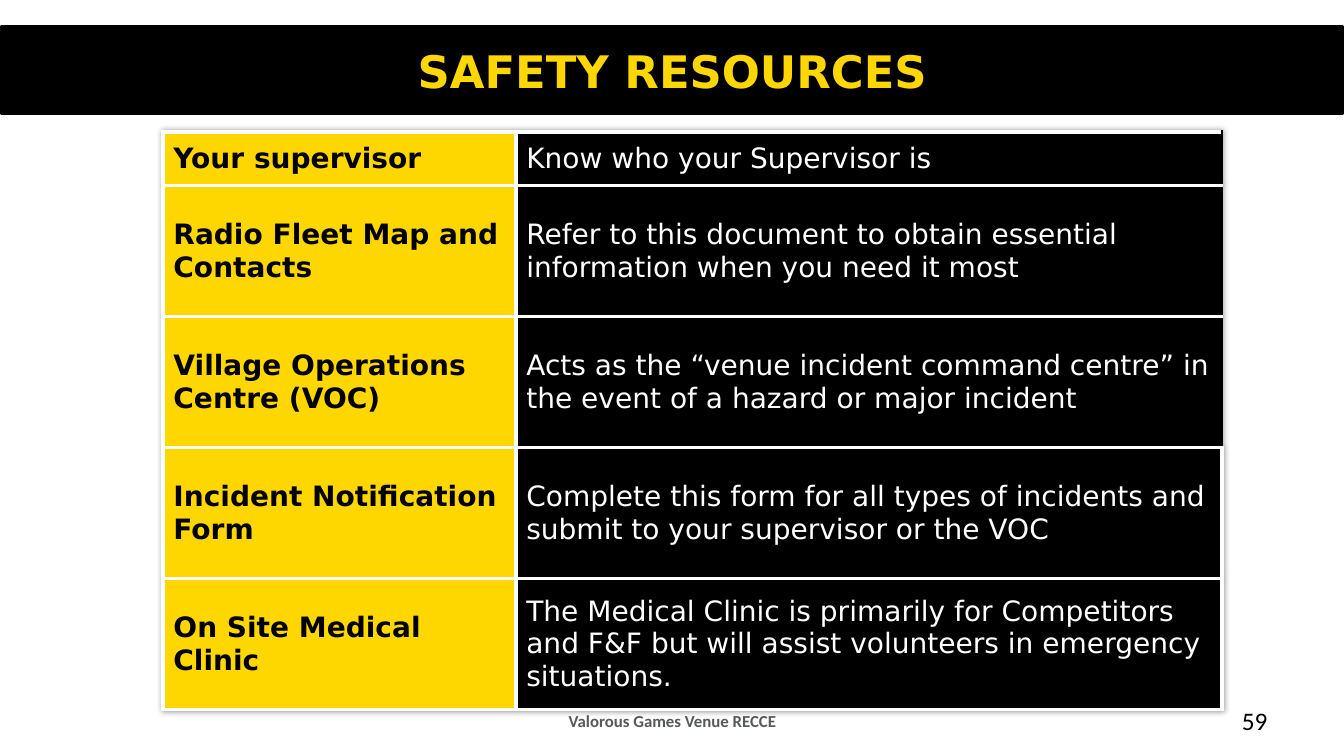
from lxml import etree
from pptx import Presentation
from pptx.dml.color import RGBColor as RGB
from pptx.enum.shapes import MSO_SHAPE as SHAPE
from pptx.enum.text import MSO_ANCHOR as ANCHOR, PP_ALIGN as ALIGN
from pptx.oxml import parse_xml
from pptx.oxml.ns import nsdecls, qn
from pptx.util import Inches, Pt

COLORS = {"black": "000000", "white": "FFFFFF", "gold": "FFD700", "gray": "58595B"}


def write(tf, text, color, align, **font):
    tf.word_wrap = True
    p = tf.paragraphs[0]
    p.alignment = align
    r = p.add_run()
    r.text = text
    for name, value in font.items():
        setattr(r.font, name, value)
    r.font.color.rgb = RGB.from_string(COLORS[color])


def set_border(cell, side, color, width):
    ln = etree.Element(qn(f"a:{side}"), w=str(Pt(width)))
    fill = etree.SubElement(ln, qn("a:solidFill"))
    etree.SubElement(fill, qn("a:srgbClr"), val=COLORS[color])
    cell._tc.get_or_add_tcPr().append(ln)


prs = Presentation()
prs.slide_width, prs.slide_height = Inches(13.33), Inches(7.5)
s = prs.slides.add_slide(prs.slide_layouts[6])

# Title band
band = s.shapes.add_shape(SHAPE.RECTANGLE, Inches(0.01), Inches(0.26), Inches(13.31), Inches(0.87))
band.shadow.inherit = False
band.fill.solid()
band.fill.fore_color.rgb = band.line.color.rgb = RGB.from_string(COLORS["black"])
band.line.width = Pt(2)

# Title, footer and slide number
TEXTS = [
    ("SAFETY RESOURCES", (0.67, 0.27, 12, 0.86), "gold", ALIGN.CENTER,
     {"size": Pt(32), "name": "DejaVu Sans", "bold": True}),
    ("Valorous Games Venue RECCE", (4.56, 6.95, 4.22, 0.4), "gray", ALIGN.CENTER,
     {"size": Pt(12), "name": "Calibri", "bold": True}),
    ("59", (9.56, 6.95, 3.11, 0.4), "black", ALIGN.RIGHT,
     {"size": Pt(18), "name": "Calibri"}),
]
for text, box, color, align, font in TEXTS:
    tf = s.shapes.add_textbox(*map(Inches, box)).text_frame
    tf.vertical_anchor = ANCHOR.MIDDLE
    write(tf, text, color, align, **font)

# Resource table
RESOURCES = [
    ("Your supervisor", "Know who your Supervisor is"),
    ("Radio Fleet Map and Contacts",
     "Refer to this document to obtain essential information when you need it most"),
    ("Village Operations Centre (VOC)",
     "Acts as the “venue incident command centre” in the event of a hazard or major incident"),
    ("Incident Notification Form",
     "Complete this form for all types of incidents and submit to your supervisor or the VOC"),
    ("On Site Medical Clinic",
     "The Medical Clinic is primarily for Competitors and F&F but will assist volunteers "
     "in emergency situations."),
]
COLUMNS = [(3.5, "gold", "black", True), (7, "black", "white", False)]
BLACK_EDGE_ROWS = 3

table = s.shapes.add_table(len(RESOURCES), len(COLUMNS), Inches(1.62), Inches(1.31),
                           Inches(10.5), Inches(5.73)).table
table.first_row = table.horz_banding = False
for col, (width, *_) in zip(table.columns, COLUMNS):
    col.width = Inches(width)

for i, texts in enumerate(RESOURCES):
    table.rows[i].height = Inches(1.3 if i else 0.53)
    for j, (_, fill, color, bold) in enumerate(COLUMNS):
        cell = table.cell(i, j)
        cell.vertical_anchor = ANCHOR.MIDDLE
        write(cell.text_frame, texts[j], color, ALIGN.LEFT,
              size=Pt(20), name="DejaVu Sans", bold=bold)
        for side in ("lnL", "lnR", "lnT", "lnB"):
            black_edge = side == "lnR" and j == 1 and i < BLACK_EDGE_ROWS
            set_border(cell, side, *(("black", 1) if black_edge else ("white", 3)))
        cell.fill.solid()
        cell.fill.fore_color.rgb = RGB.from_string(COLORS[fill])

# Soft shadow around the table
table._tbl.tblPr.insert(0, parse_xml(
    f'<a:effectLst {nsdecls("a")}><a:outerShdw blurRad="50800" dist="0" algn="ctr" rotWithShape="0">'
    f'<a:srgbClr val="{COLORS["black"]}"><a:alpha val="40000"/></a:srgbClr>'
    '</a:outerShdw></a:effectLst>'))

prs.save("out.pptx")
